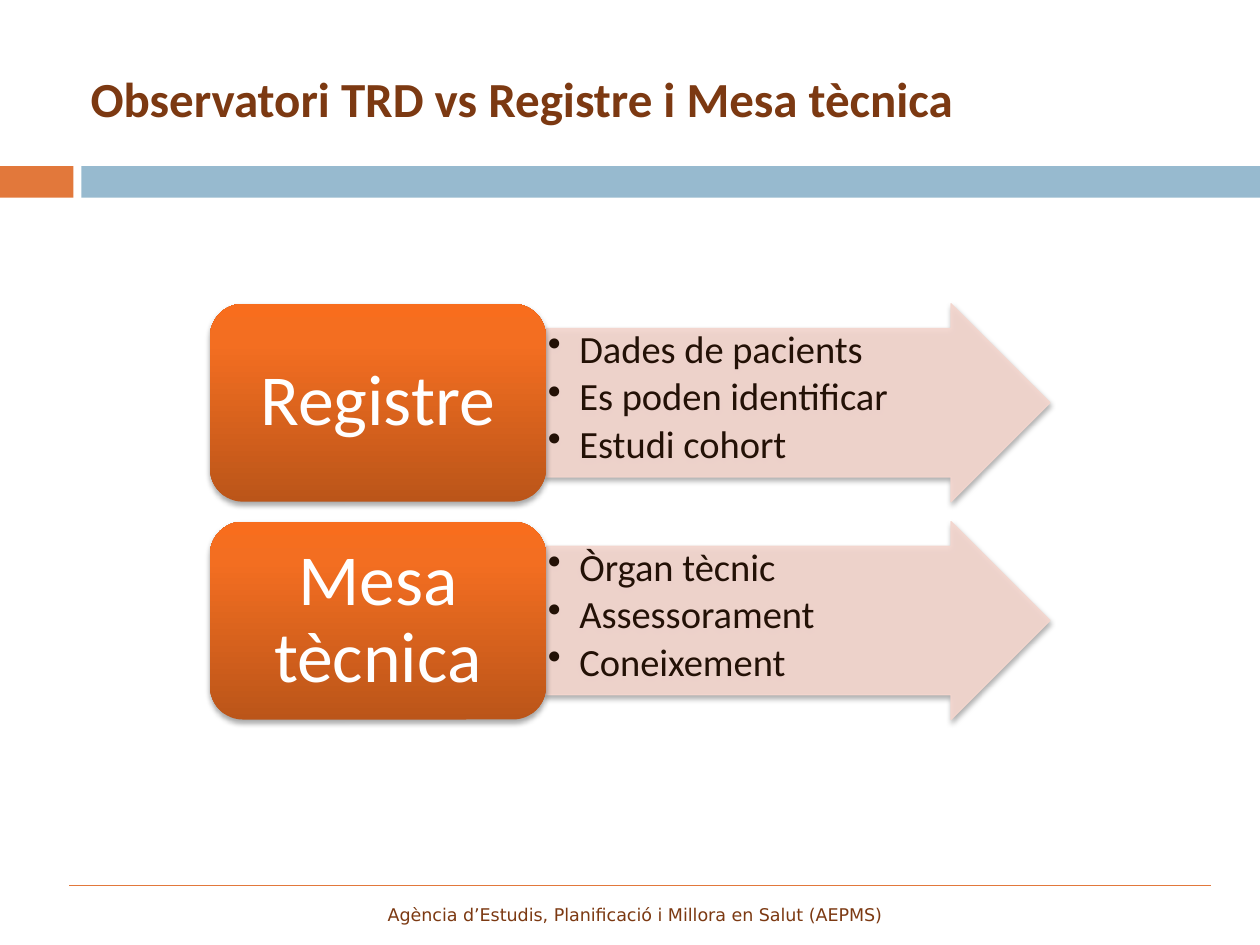
from copy import deepcopy

from lxml import etree
from pptx import Presentation
from pptx.dml.color import RGBColor
from pptx.enum.shapes import MSO_CONNECTOR, MSO_SHAPE
from pptx.enum.text import MSO_ANCHOR, PP_ALIGN
from pptx.oxml.ns import qn
from pptx.util import Pt

RECTANGLE = MSO_SHAPE.RECTANGLE
ROUNDED = MSO_SHAPE.ROUNDED_RECTANGLE
ARROW = MSO_SHAPE.RIGHT_ARROW
STRAIGHT = MSO_CONNECTOR.STRAIGHT
LEFT, CENTER = PP_ALIGN.LEFT, PP_ALIGN.CENTER
TOP, MIDDLE, BOTTOM = MSO_ANCHOR.TOP, MSO_ANCHOR.MIDDLE, MSO_ANCHOR.BOTTOM

ORANGE, BLUE, BROWN, PINK = "E2783B", "97BACF", "7C3912", "F4D6CE"
GRADIENT = [(0, "BB5519"), (0.8, "F36E21"), (1, "F86D1D")]
TOPICS = [
    ("Registre", ["Dades de pacients", "Es poden identificar", "Estudi cohort"]),
    ("Mesa tècnica", ["Òrgan tècnic", "Assessorament", "Coneixement"]),
]


def color(value):
    """Turn a hex string into a colour."""
    return RGBColor.from_string(value)


def add_child(parent, tag, **attributes):
    """Append an XML element with the given attributes."""
    element = etree.SubElement(parent, qn(tag))
    for name, value in attributes.items():
        element.set(name, str(value))
    return element


def add_box(slide, kind, box):
    """Add a preset shape without line or shadow."""
    shape = slide.shapes.add_shape(kind, *map(Pt, box))
    shape.line.fill.background()
    shape.shadow.inherit = False
    return shape


def write_text(shape, lines, size, value, align, anchor, insets=(7.2, 3.6), name="Calibri"):
    """Fill a shape with equally formatted paragraphs and return them."""
    frame = shape.text_frame
    frame.word_wrap = True
    frame.vertical_anchor = anchor
    frame.margin_left = frame.margin_right = Pt(insets[0])
    frame.margin_top = frame.margin_bottom = Pt(insets[1])
    frame.text = "\n".join(lines)
    for paragraph in frame.paragraphs:
        paragraph.alignment = align
        paragraph.font.name = name
        paragraph.font.size = Pt(size)
        paragraph.font.color.rgb = color(value)
    return frame.paragraphs


def cast_shadow(shape):
    """Give a shape a soft shadow below it."""
    effects = shape._element.spPr.find(qn("a:effectLst"))
    shadow = add_child(effects, "a:outerShdw", blurRad=Pt(3.1), dist=Pt(1.8),
                       dir=5400000, rotWithShape=0)
    black = add_child(shadow, "a:srgbClr", val="000000")
    add_child(black, "a:alpha", val=35000)


def add_title(slide, box, text):
    """Place the title placeholder."""
    title = slide.shapes.title
    title.left, title.top, title.width, title.height = map(Pt, box)
    write_text(title, [text], 28, BROWN, LEFT, MIDDLE)[0].font.bold = True


def add_band(slide, box):
    """Draw the two-coloured band under the title."""
    left, top, width, height = box
    for start, end, value in [(0, 42, ORANGE), (46.5, width, BLUE)]:
        part = add_box(slide, RECTANGLE, (left + start, top, end - start, height))
        part.fill.solid()
        part.fill.fore_color.rgb = color(value)


def add_footer(slide, box, text):
    """Draw the footer text under its rule."""
    left, top, width, height = box
    rule = slide.shapes.add_connector(STRAIGHT, Pt(left), Pt(top), Pt(left + width), Pt(top))
    rule.line.color.rgb = color(ORANGE)
    rule.line.width = Pt(0.75)
    add_child(rule._element.spPr, "a:effectLst")
    footer = slide.shapes.add_textbox(*map(Pt, (left, top, width - 6, height)))
    write_text(footer, [text], 10, BROWN, CENTER, BOTTOM, name="DejaVu Sans")


def add_arrow(slide, box, items):
    """Draw a translucent arrow that holds a bulleted list."""
    arrow = add_box(slide, ARROW, box)
    arrow.adjustments[0], arrow.adjustments[1] = 0.75, 0.5
    arrow.fill.solid()
    arrow.fill.fore_color.rgb = arrow.line.color.rgb = color(PINK)
    arrow.line.width = Pt(0.75)
    for pink in arrow._element.spPr.iter(qn("a:srgbClr")):
        add_child(pink, "a:alpha", val=90000)
    cast_shadow(arrow)
    for paragraph in write_text(arrow, items, 22, "231106", LEFT, TOP, (1.1, 1.1)):
        paragraph.line_spacing = 0.9
        paragraph.space_after = Pt(3.3)
        properties = paragraph._p.get_or_add_pPr()
        properties.set("marL", str(Pt(18)))
        properties.set("indent", str(-Pt(18)))
        bullet = etree.Element(qn("a:buChar"), char="•")
        properties.find(qn("a:defRPr")).addprevious(bullet)


def add_label(slide, box, text):
    """Draw a rounded box with a vertical gradient and a large label."""
    label = add_box(slide, ROUNDED, box)
    label.fill.gradient()
    label.fill.gradient_angle = 90
    stops = label._element.spPr.find(qn("a:gradFill")).find(qn("a:gsLst"))
    stops.append(deepcopy(stops[-1]))
    for stop, (position, value) in zip(label.fill.gradient_stops, GRADIENT):
        stop.position = position
        stop.color.rgb = color(value)
    cast_shadow(label)
    write_text(label, [text], 41, "FFFFFF", CENTER, MIDDLE, (12.2, 6.5))[0].line_spacing = 0.9


def add_topics(slide, box, topics, gap):
    """Stack one label and arrow row for each topic."""
    left, top, width, height = box
    row_height = (height - gap * (len(topics) - 1)) / len(topics)
    label_width = width * 0.4
    for index, (name, items) in enumerate(topics):
        row_top = top + index * (row_height + gap)
        add_arrow(slide, (left + label_width, row_top, width - label_width, row_height), items)
        add_label(slide, (left, row_top, label_width, row_height), name)


def main():
    """Build and save the slide."""
    presentation = Presentation()
    presentation.slide_width, presentation.slide_height = Pt(720), Pt(540)
    slide = presentation.slides.add_slide(presentation.slide_layouts[5])
    add_band(slide, (0, 95, 720, 18))
    add_title(slide, (44.6, 22.3, 639.4, 67.7), "Observatori TRD vs Registre i Mesa tècnica")
    add_footer(slide, (39.6, 506.2, 652.4, 25.9),
               "Agència d’Estudis, Planificació i Millora en Salut (AEPMS)")
    add_topics(slide, (120, 173.6, 480, 237.6), TOPICS, 11.4)
    presentation.save("out.pptx")


if __name__ == "__main__":
    main()
